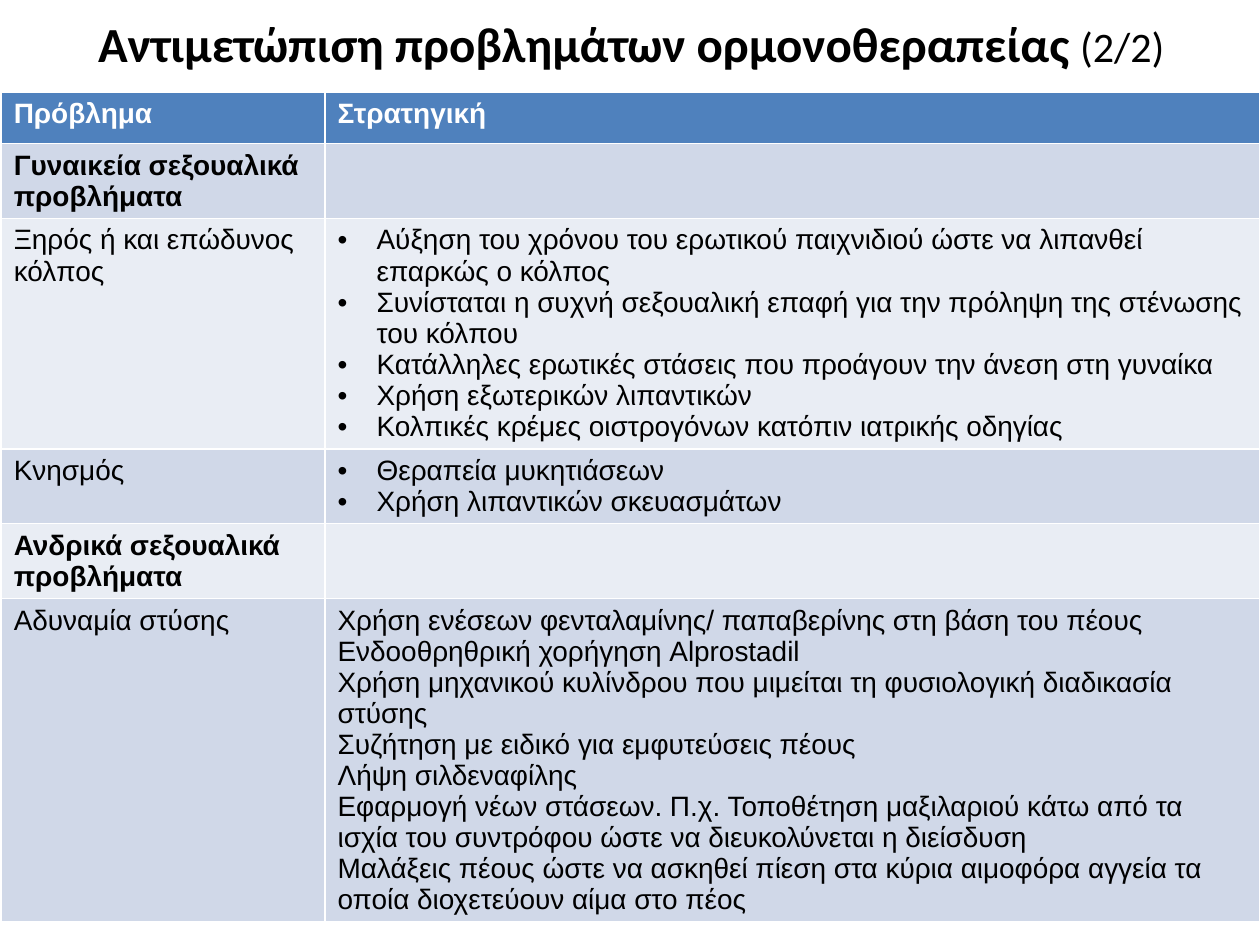
from pptx import Presentation
from pptx.dml.color import RGBColor
from pptx.enum.text import MSO_ANCHOR, MSO_AUTO_SIZE, PP_ALIGN
from pptx.oxml.xmlchemy import OxmlElement
from pptx.util import Inches, Pt

THEME = {
    "title_font": "Calibri", "body_font": "Arial",
    "title_size": 28, "part_size": 24, "body_size": 16,
    "text": "000000", "header_text": "FFFFFF", "header_fill": "4F81BD",
    "bands": ("D0D8E8", "E9EDF4"),
}

TITLE = "Αντιμετώπιση προβλημάτων ορμονοθεραπείας "
PART = "(2/2)"
HEADER = ("Πρόβλημα", "Στρατηγική")

# (kind, problem, strategies)
ROWS = [
    ("section", "Γυναικεία σεξουαλικά προβλήματα", []),
    ("bullets", "Ξηρός ή και επώδυνος κόλπος", [
        "Αύξηση του χρόνου του ερωτικού παιχνιδιού ώστε να λιπανθεί επαρκώς ο κόλπος",
        "Συνίσταται η συχνή σεξουαλική επαφή για την πρόληψη της στένωσης του κόλπου",
        "Κατάλληλες ερωτικές στάσεις που προάγουν την άνεση στη γυναίκα",
        "Χρήση εξωτερικών λιπαντικών",
        "Κολπικές κρέμες οιστρογόνων κατόπιν ιατρικής οδηγίας",
    ]),
    ("bullets", "Κνησμός", [
        "Θεραπεία μυκητιάσεων",
        "Χρήση λιπαντικών σκευασμάτων",
    ]),
    ("section", "Ανδρικά σεξουαλικά προβλήματα", []),
    ("plain", "Αδυναμία στύσης", [
        "Χρήση ενέσεων φενταλαμίνης/ παπαβερίνης στη βάση του πέους",
        "Ενδοοθρηθρική χορήγηση Alprostadil",
        "Χρήση μηχανικού κυλίνδρου που μιμείται τη φυσιολογική διαδικασία στύσης",
        "Συζήτηση με ειδικό για εμφυτεύσεις πέους",
        "Λήψη σιλδεναφίλης",
        "Εφαρμογή νέων στάσεων. Π.χ. Τοποθέτηση μαξιλαριού κάτω από τα ισχία του "
        "συντρόφου ώστε να διευκολύνεται η διείσδυση",
        "Μαλάξεις πέους ώστε να ασκηθεί πίεση στα κύρια αιμοφόρα αγγεία τα οποία "
        "διοχετεύουν αίμα στο πέος",
    ]),
]

COL_WIDTHS = (2.57, 7.42)
ROW_HEIGHT = 0.41
INDENT = 0.31


def add_run(p, text, font, size, color, bold=False):
    r = p.add_run()
    r.text = text
    r.font.name = font
    r.font.size = Pt(size)
    r.font.bold = bold
    r.font.color.rgb = RGBColor.from_string(color)


def add_bullet(p):
    pPr = p._p.get_or_add_pPr()
    pPr.set("marL", str(Inches(INDENT)))
    pPr.set("indent", str(-Inches(INDENT)))
    font = OxmlElement("a:buFont")
    font.set("typeface", THEME["body_font"])
    char = OxmlElement("a:buChar")
    char.set("char", "•")
    pPr.extend([font, char])


def fill_cell(cell, lines, fill, color, bold=False, bullets=False):
    cell.fill.solid()
    cell.fill.fore_color.rgb = RGBColor.from_string(fill)
    tf = cell.text_frame
    for i, line in enumerate(lines):
        p = tf.add_paragraph() if i else tf.paragraphs[0]
        if bullets:
            add_bullet(p)
        add_run(p, line, THEME["body_font"], THEME["body_size"], color, bold)


def add_title(s):
    sp = s.shapes.title
    sp.left, sp.top, sp.width, sp.height = (Inches(v) for v in (0.51, 0, 9, 0.68))
    tf = sp.text_frame
    tf.auto_size = MSO_AUTO_SIZE.NONE
    tf.vertical_anchor = MSO_ANCHOR.MIDDLE
    p = tf.paragraphs[0]
    p.alignment = PP_ALIGN.CENTER
    add_run(p, TITLE, THEME["title_font"], THEME["title_size"], THEME["text"], True)
    add_run(p, PART, THEME["title_font"], THEME["part_size"], THEME["text"])


def add_strategy_table(s):
    count = len(ROWS) + 1
    table = s.shapes.add_table(
        count, len(COL_WIDTHS), Inches(0.01), Inches(0.73),
        Inches(sum(COL_WIDTHS)), Inches(ROW_HEIGHT * count)).table
    for column, width in zip(table.columns, COL_WIDTHS):
        column.width = Inches(width)
    for row in table.rows:
        row.height = Inches(ROW_HEIGHT)
    for c, label in enumerate(HEADER):
        fill_cell(table.cell(0, c), [label], THEME["header_fill"],
                  THEME["header_text"], bold=True)
    for i, (kind, problem, strategies) in enumerate(ROWS):
        band = THEME["bands"][i % 2]
        fill_cell(table.cell(i + 1, 0), [problem], band, THEME["text"],
                  bold=kind == "section")
        fill_cell(table.cell(i + 1, 1), strategies, band, THEME["text"],
                  bullets=kind == "bullets")


def main():
    prs = Presentation()
    prs.slide_width, prs.slide_height = Inches(10), Inches(7.5)
    s = prs.slides.add_slide(prs.slide_layouts[5])
    add_title(s)
    add_strategy_table(s)
    prs.save("out.pptx")


if __name__ == "__main__":
    main()
